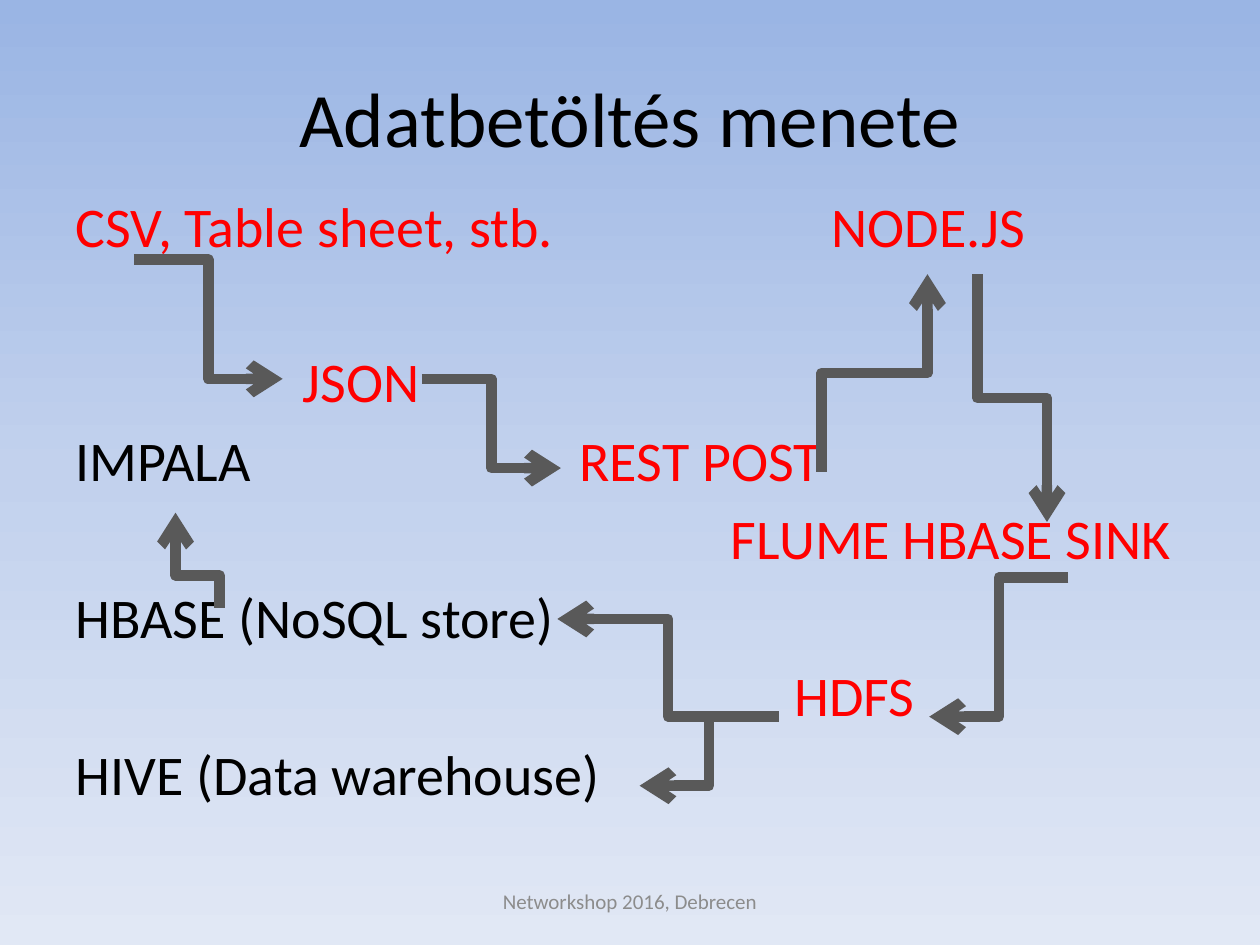
import copy
from dataclasses import dataclass

import pptx
import pptx.dml.color
import pptx.enum.shapes
import pptx.enum.text
import pptx.oxml.ns
import pptx.util

Pt = pptx.util.Pt
qn = pptx.oxml.ns.qn
ALIGN = pptx.enum.text.PP_ALIGN
ANCHOR = pptx.enum.text.MSO_ANCHOR
FONT, BLACK, RED, GREY = "Calibri", "000000", "FF0000", "595959"
GAP = 6.4  # space before a line


@dataclass
class Word:
    text: str
    color: str = RED
    tabs: int = 0  # half-inch tab stops before the word


@dataclass
class Line:
    words: list
    left: float = 0
    before: float = GAP


@dataclass
class Arrow:
    start: tuple
    end: tuple
    upright: bool = False  # leaves and arrives vertically
    bend: float = 0.5


LINES = [
    Line([Word("CSV, Table sheet, stb."), Word("NODE.JS", tabs=5)], before=1.5),
    Line([Word("JSON")], 129.9, 50.25),
    Line([Word("IMPALA", BLACK), Word("REST POST", tabs=6)]),
    Line([Word("FLUME HBASE SINK")], 374.5),
    Line([Word("HBASE (NoSQL store)", BLACK)]),
    Line([Word("HDFS")], 410.6),
    Line([Word("HIVE (Data warehouse)", BLACK)]),
]
ARROWS = [
    Arrow((76.5, 148.3), (161.5, 216.5)),
    Arrow((241, 216.5), (320.5, 267.5)),
    Arrow((469.5, 269.5), (530, 156.7), True),
    Arrow((610.5, 330), (531, 409.5)),
    Arrow((445, 409.5), (365.5, 449)),
    Arrow((445, 409.5), (318.5, 353.7)),
    Arrow((125.5, 347.3), (100.3, 293), True, 0.34),
    Arrow((558.5, 156.7), (598.3, 298.3), True),
]


def rgb(code: str):
    return pptx.dml.color.RGBColor.from_string(code)


def write(para, text: str, *, size: float, color: str = BLACK, align=None):
    run = para.add_run()
    run.text = text
    run.font.name, run.font.size = FONT, Pt(size)
    run.font.color.rgb = rgb(color)
    if align is not None:
        para.alignment = align


def place(shape, left: float, top: float, width: float, height: float):
    shape.left, shape.top = Pt(left), Pt(top)
    shape.width, shape.height = Pt(width), Pt(height)


def add_line(para, line: Line):
    para.space_before = Pt(line.before)
    props = para._p.get_or_add_pPr()
    props.set("marL", str(int(Pt(line.left))))
    props.set("indent", "0")
    props.append(props.makeelement(qn("a:buNone"), {}))
    for word in line.words:
        write(para, "\t" * word.tabs + word.text, size=32, color=word.color)


def add_arrow(slide, arrow: Arrow):
    (x1, y1), (x2, y2) = arrow.start, arrow.end
    turn = 0
    if arrow.upright:
        # Lay the path flat around its centre, then rotate it back
        dx, dy = x2 - x1, y2 - y1
        turn, side = (90, 1) if dx * dy < 0 else (270, -1)
        mx, my = (x1 + x2) / 2, (y1 + y2) / 2
        wide, high = side * dy / 2, -side * dx / 2
        x1, y1, x2, y2 = mx - wide, my - high, mx + wide, my + high
    link = slide.shapes.add_connector(
        pptx.enum.shapes.MSO_CONNECTOR.ELBOW, Pt(x1), Pt(y1), Pt(x2), Pt(y2))
    link.line.color.rgb, link.line.width = rgb(GREY), Pt(6)
    props = link._element.spPr
    if turn:
        props.find(qn("a:xfrm")).set("rot", str(turn * 60000))
    guides = props.find(qn("a:prstGeom")).find(qn("a:avLst"))
    bend = {"name": "adj1", "fmla": f"val {round(arrow.bend * 100000)}"}
    guides.append(guides.makeelement(qn("a:gd"), bend))
    edge = link.line._get_or_add_ln()
    edge.append(edge.makeelement(qn("a:tailEnd"), {"type": "arrow"}))
    props.append(props.makeelement(qn("a:effectLst"), {}))


def paint(slide):
    fill = slide.background.fill
    fill.gradient()
    fill.gradient_angle = 270
    stops = slide._element.find(".//" + qn("a:gsLst"))
    stops.append(copy.deepcopy(stops[-1]))
    shades = [(0, "9AB5E4"), (0.5, "C2D1ED"), (1, "E1E8F5")]
    for stop, (pos, shade) in zip(fill.gradient_stops, shades):
        stop.position, stop.color.rgb = pos, rgb(shade)


def main():
    deck = pptx.Presentation()
    deck.slide_width, deck.slide_height = Pt(720), Pt(540)
    slide = deck.slides.add_slide(deck.slide_layouts[1])
    paint(slide)

    # Title
    title = slide.shapes.title
    place(title, 36, 21.6, 648, 90)
    title.text_frame.vertical_anchor = ANCHOR.MIDDLE
    write(title.text_frame.paragraphs[0], "Adatbetöltés menete",
          size=44, align=ALIGN.CENTER)

    # Stages of the data load
    body = slide.placeholders[1]
    place(body, 36, 106, 648, 420)
    frame = body.text_frame
    frame.auto_size = pptx.enum.text.MSO_AUTO_SIZE.NONE
    for i, line in enumerate(LINES):
        add_line(frame.add_paragraph() if i else frame.paragraphs[0], line)

    # Flow between the stages
    for arrow in ARROWS:
        add_arrow(slide, arrow)

    # Footer
    foot = slide.shapes.add_textbox(Pt(246), Pt(500.5), Pt(228), Pt(28.75))
    foot.text_frame.word_wrap = True
    foot.text_frame.vertical_anchor = ANCHOR.MIDDLE
    write(foot.text_frame.paragraphs[0], "Networkshop 2016, Debrecen",
          size=12, color="8C8C8C", align=ALIGN.CENTER)

    deck.save("out.pptx")


if __name__ == "__main__":
    main()
